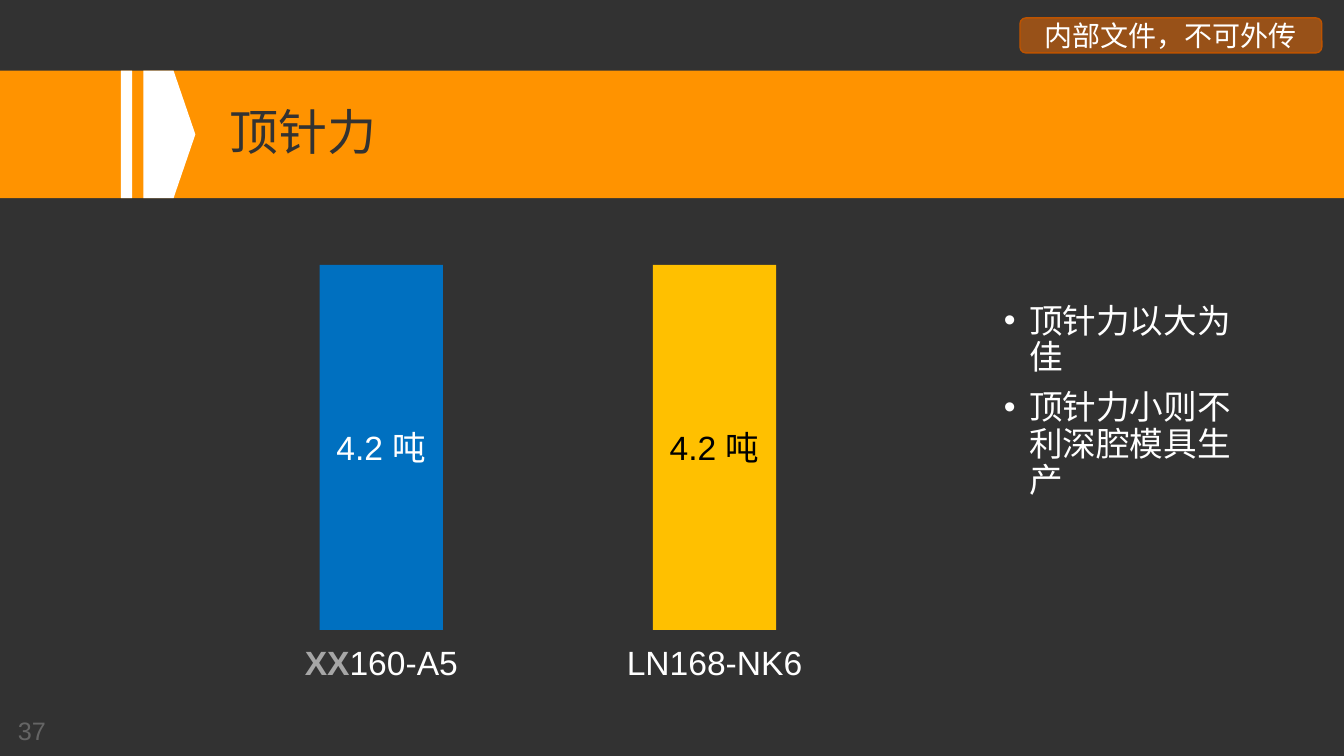
import pptx
import pptx.util
import pptx.dml.color
import pptx.enum.shapes
import pptx.enum.text
import pptx.oxml
import pptx.oxml.ns

Pt = pptx.util.Pt
ALIGN = pptx.enum.text.PP_ALIGN
ANCHOR = pptx.enum.text.MSO_ANCHOR
SHAPE = pptx.enum.shapes.MSO_SHAPE
A_NS = pptx.oxml.ns.nsdecls("a")


def paint(sp, color):
    sp.shadow.inherit = False
    sp.fill.solid()
    sp.fill.fore_color.rgb = pptx.dml.color.RGBColor.from_string(color)
    sp.line.fill.background()


def format_text(sp, size, color, align=ALIGN.LEFT, anchor=ANCHOR.TOP, inset=None):
    tf = sp.text_frame
    tf.word_wrap = True
    tf.auto_size = pptx.enum.text.MSO_AUTO_SIZE.NONE
    tf.vertical_anchor = anchor
    if inset is not None:
        tf.margin_left = tf.margin_right = Pt(inset)
        tf.margin_top = tf.margin_bottom = Pt(inset)
    for p in tf.paragraphs:
        p.alignment = align
        for r in p.runs:
            r.font.name = "Arial"
            r.font.size = Pt(size)
            r.font.color.rgb = pptx.dml.color.RGBColor.from_string(color)


prs = pptx.Presentation()
prs.slide_width, prs.slide_height = Pt(960), Pt(540)
s = prs.slides.add_slide(prs.slide_layouts[5])
s.background.fill.solid()
s.background.fill.fore_color.rgb = pptx.dml.color.RGBColor.from_string("323232")

# Title band with white stripe and pointer
band_top, band_height = 50.4, 91.2
band_bottom = band_top + band_height
for left, width, color in [(0, 960, "FF9300"), (86.4, 8, "FFFFFF")]:
    sp = s.shapes.add_shape(SHAPE.RECTANGLE, Pt(left), Pt(band_top), Pt(width), Pt(band_height))
    paint(sp, color)

fb = s.shapes.build_freeform(Pt(102.4), Pt(band_top))
fb.add_line_segments([
    (Pt(102.4), Pt(band_bottom)),
    (Pt(124), Pt(band_bottom)),
    (Pt(139.6), Pt(band_top + band_height / 2)),
    (Pt(124), Pt(band_top)),
], close=True)
paint(fb.convert_to_shape(), "FFFFFF")

# Title, raised above the band
title = s.shapes.title
title.left, title.top, title.width, title.height = Pt(157), Pt(band_top), Pt(772.6), Pt(band_height)
title.text_frame.text = "顶针力"
title.text_frame.paragraphs[0].line_spacing = 0.9
format_text(title, 35, "323232", anchor=ANCHOR.MIDDLE)
title._element.getparent().append(title._element)

# Confidentiality label
label = s.shapes.add_shape(SHAPE.ROUNDED_RECTANGLE, Pt(728.6), Pt(12.8), Pt(215.6), Pt(25))
paint(label, "FF7000")
fill_color = label._element.spPr.find(".//" + pptx.oxml.ns.qn("a:srgbClr"))
fill_color.append(pptx.oxml.parse_xml(f'<a:alpha {A_NS} val="50000"/>'))
label.line.color.rgb = pptx.dml.color.RGBColor.from_string("BD5300")
label.line.width = Pt(1)
label.text_frame.text = "内部文件，不可外传"
format_text(label, 20, "FFFFFF", ALIGN.CENTER, ANCHOR.MIDDLE)

# Force bars with machine names below
bar_width, name_width = 88, 212
bars = [
    (272.4, "0070C0", "FFFFFF", "XX", "160-A5"),
    (510.4, "FFC000", "000000", "", "LN168-NK6"),
]
for center, color, text_color, prefix, model in bars:
    bar = s.shapes.add_shape(SHAPE.RECTANGLE, Pt(center - bar_width / 2), Pt(189.2), Pt(bar_width), Pt(260.8))
    paint(bar, color)
    bar.text_frame.text = "4.2 吨"
    format_text(bar, 24, text_color, ALIGN.CENTER, ANCHOR.MIDDLE, 3.6)

    name = s.shapes.add_textbox(Pt(center - name_width / 2), Pt(455), Pt(name_width), Pt(36))
    p = name.text_frame.paragraphs[0]
    p.space_before = Pt(4)
    for text in filter(None, (prefix, model)):
        p.add_run().text = text
    format_text(name, 24, "FFFFFF", ALIGN.CENTER, inset=3.6)
    if prefix:
        p.runs[0].font.bold = True
        p.runs[0].font.color.rgb = pptx.dml.color.RGBColor.from_string("A6A6A6")

# Bulleted remarks
remarks = s.shapes.add_textbox(Pt(710), Pt(213.8), Pt(190), Pt(310))
remarks.text_frame.text = "顶针力以大为佳\n顶针力小则不利深腔模具生产"
format_text(remarks, 24, "FFFFFF")
for p in remarks.text_frame.paragraphs:
    p.line_spacing = 0.9
    p.space_before = Pt(10)
    pPr = p._p.get_or_add_pPr()
    pPr.set("marL", str(Pt(18)))
    pPr.set("indent", str(-Pt(18)))
    pPr.append(pptx.oxml.parse_xml(f'<a:buFont {A_NS} typeface="Arial"/>'))
    pPr.append(pptx.oxml.parse_xml(f'<a:buChar {A_NS} char="•"/>'))

# Page number
number = s.shapes.add_textbox(Pt(5.6), Pt(507.6), Pt(47.6), Pt(26))
number.text_frame.text = "37"
format_text(number, 18, "656565")

prs.save("out.pptx")
